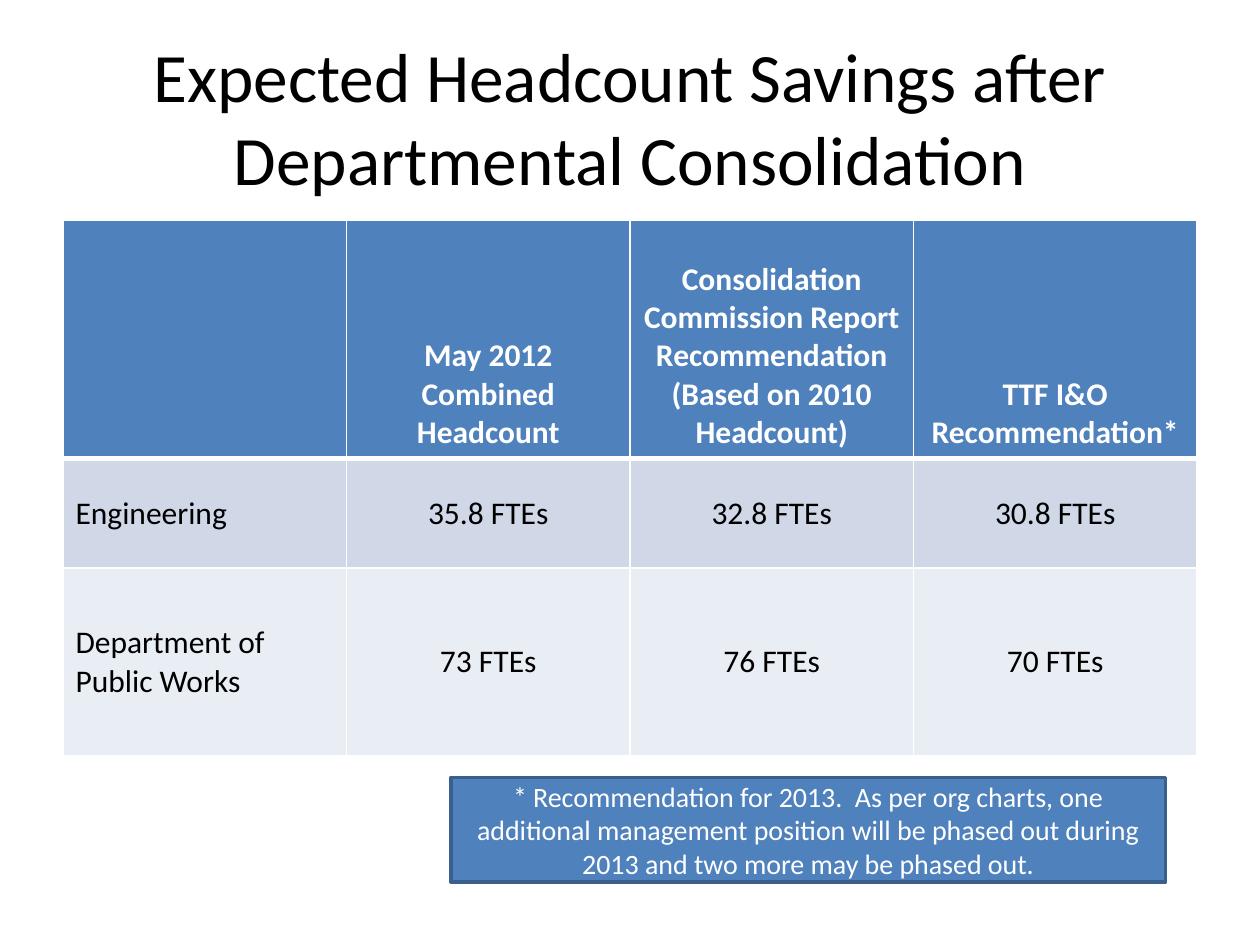
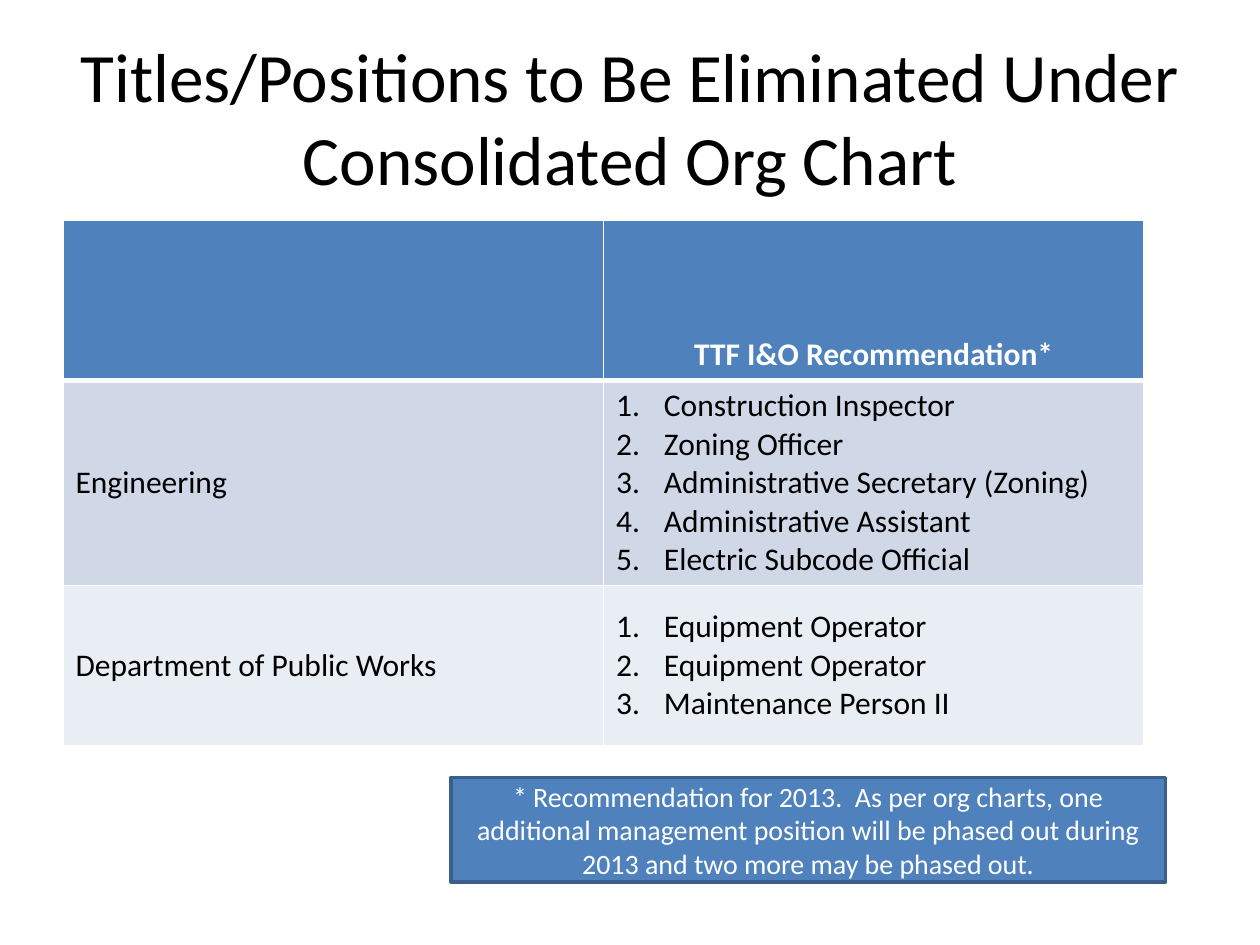
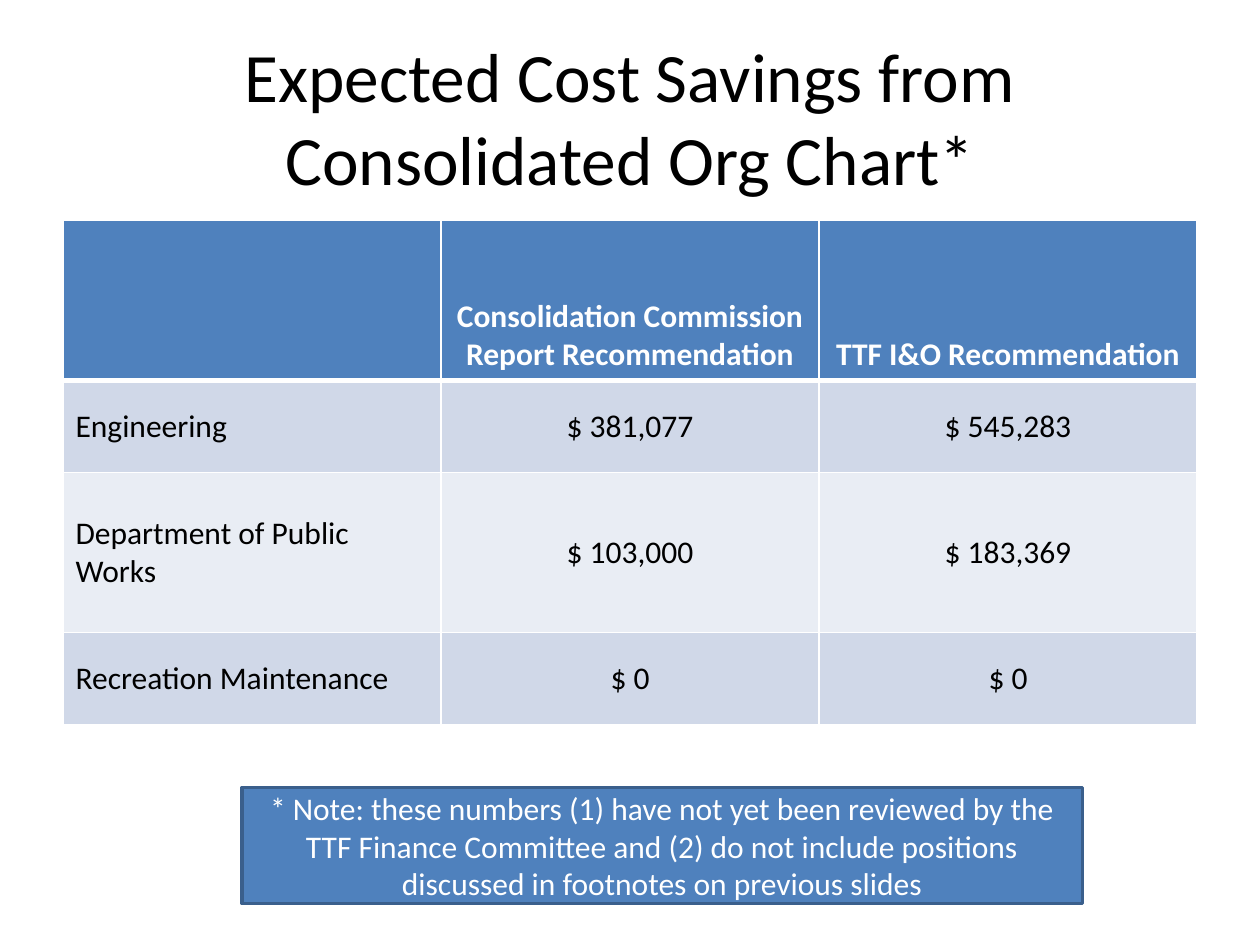
from lxml.etree import SubElement
from pptx import Presentation
from pptx.dml.color import RGBColor
from pptx.enum.shapes import MSO_SHAPE
from pptx.enum.text import MSO_ANCHOR, MSO_AUTO_SIZE, PP_ALIGN
from pptx.oxml.ns import qn
from pptx.util import Inches, Pt

COLORS = {
    "header": "4F81BD",
    "band_dark": "D0D8E8",
    "band_light": "E9EDF4",
    "note_line": "3A5F8C",
    "white": "FFFFFF",
    "black": "000000",
}
FONT = "Calibri"
TITLE_FORMAT = {"name": FONT, "size": Pt(39.6), "bold": False}
HEADER_FORMAT = {"name": FONT, "size": Pt(18), "bold": True}
BODY_FORMAT = {"name": FONT, "size": Pt(18), "bold": False}
NOTE_FORMAT = {"name": FONT, "size": Pt(16), "bold": False}

LEFT_MARGIN = 0.5
TABLE_TOP = 1.75
LIST_INDENT = 0.38
PHASE_OUT_NOTE = (
    "* Recommendation for 2013.  As per org charts, one additional management "
    "position will be phased out during 2013 and two more may be phased out."
)
PHASE_OUT_PLACE = (3.58, 6.17, 5.67, 0.83)


def color(name):
    return RGBColor.from_string(COLORS[name])


def write(paragraph, text, formats, color_name, alignment):
    paragraph.alignment = alignment
    span = paragraph.add_run()
    span.text = text
    for attribute, value in formats.items():
        setattr(span.font, attribute, value)
    span.font.color.rgb = color(color_name)


def add_title(page, text):
    title = page.shapes.title
    title.left, title.top = Inches(LEFT_MARGIN), Inches(0.3)
    title.width, title.height = Inches(9), Inches(1.25)
    frame = title.text_frame
    frame.word_wrap = True
    frame.auto_size = MSO_AUTO_SIZE.NONE
    frame.vertical_anchor = MSO_ANCHOR.MIDDLE
    write(frame.paragraphs[0], text, TITLE_FORMAT, "black", PP_ALIGN.CENTER)


def add_note(page, text, place, formats=NOTE_FORMAT):
    box = page.shapes.add_shape(MSO_SHAPE.RECTANGLE, *map(Inches, place))
    box.shadow.inherit = False
    box.fill.solid()
    box.fill.fore_color.rgb = color("header")
    box.line.color.rgb = color("note_line")
    box.line.width = Pt(2)
    frame = box.text_frame
    frame.word_wrap = True
    frame.vertical_anchor = MSO_ANCHOR.MIDDLE
    write(frame.paragraphs[0], text, formats, "white", PP_ALIGN.CENTER)


def set_borders(cell, widths):
    properties = cell._tc.get_or_add_tcPr()
    for position, (side, width) in enumerate(widths.items()):
        line = properties.makeelement(qn(f"a:{side}"), {"w": str(Pt(width))})
        fill = SubElement(line, qn("a:solidFill"))
        SubElement(fill, qn("a:srgbClr"), val=COLORS["white"])
        properties.insert(position, line)


def number_paragraph(paragraph):
    properties = paragraph._p.get_or_add_pPr()
    properties.set("marL", str(Inches(LIST_INDENT)))
    properties.set("indent", str(-Inches(LIST_INDENT)))
    SubElement(properties, qn("a:buFont"), typeface="+mj-lt")
    SubElement(properties, qn("a:buAutoNum"), type="arabicPeriod")


def fill_cell(cell, content, row, column):
    is_header = row == 0
    is_list = isinstance(content, list)
    band = "band_dark" if row % 2 else "band_light"
    cell.fill.solid()
    cell.fill.fore_color.rgb = color("header" if is_header else band)
    cell.vertical_anchor = MSO_ANCHOR.BOTTOM if is_header else MSO_ANCHOR.MIDDLE
    set_borders(cell, {
        "lnL": 1,
        "lnR": 1,
        "lnT": 3 if row == 1 else 1,
        "lnB": 3 if is_header else 1,
    })
    formats = HEADER_FORMAT if is_header else BODY_FORMAT
    text_color = "white" if is_header else "black"
    left_aligned = is_list or column == 0
    alignment = PP_ALIGN.LEFT if left_aligned else PP_ALIGN.CENTER
    frame = cell.text_frame
    for index, text in enumerate(content if is_list else [content]):
        paragraph = frame.add_paragraph() if index else frame.paragraphs[0]
        write(paragraph, text, formats, text_color, alignment)
        if is_list:
            number_paragraph(paragraph)


def add_grid(page, rows, heights, width=9):
    column_count = len(rows[0])
    table = page.shapes.add_table(
        len(rows), column_count, Inches(LEFT_MARGIN), Inches(TABLE_TOP),
        Inches(width), Inches(sum(heights)),
    ).table
    for column in table.columns:
        column.width = Inches(width / column_count)
    for row, (contents, height) in enumerate(zip(rows, heights)):
        table.rows[row].height = Inches(height)
        for column, content in enumerate(contents):
            fill_cell(table.cell(row, column), content, row, column)


def add_page(deck, title):
    page = deck.slides.add_slide(deck.slide_layouts[5])
    add_title(page, title)
    return page


def add_headcount_page(deck):
    page = add_page(deck, "Expected Headcount Savings after Departmental Consolidation")
    add_grid(page, [
        ["", "May 2012 Combined Headcount",
         "Consolidation Commission Report Recommendation (Based on 2010 Headcount)",
         "TTF I&O Recommendation*"],
        ["Engineering", "35.8 FTEs", "32.8 FTEs", "30.8 FTEs"],
        ["Department of Public Works", "73 FTEs", "76 FTEs", "70 FTEs"],
    ], [1.89, 0.87, 1.49])
    add_note(page, PHASE_OUT_NOTE, PHASE_OUT_PLACE)


def add_positions_page(deck):
    page = add_page(deck, "Titles/Positions to Be Eliminated Under Consolidated Org Chart")
    add_grid(page, [
        ["", "TTF I&O Recommendation*"],
        ["Engineering",
         ["Construction Inspector", "Zoning Officer",
          "Administrative Secretary (Zoning)", "Administrative Assistant",
          "Electric Subcode Official"]],
        ["Department of Public Works",
         ["Equipment Operator", "Equipment Operator", "Maintenance Person II"]],
    ], [1.27, 1.62, 1.27], width=8.58)
    add_note(page, PHASE_OUT_NOTE, PHASE_OUT_PLACE)


def add_cost_page(deck):
    page = add_page(deck, "Expected Cost Savings from Consolidated Org Chart*")
    add_grid(page, [
        ["", "Consolidation Commission Report Recommendation", "TTF I&O Recommendation"],
        ["Engineering", "$ 381,077", "$ 545,283"],
        ["Department of Public Works", "$ 103,000", "$ 183,369"],
        ["Recreation Maintenance", "$ 0", "$ 0"],
    ], [1.27, 0.73, 1.27, 0.73])
    add_note(
        page,
        "* Note: these numbers (1) have not yet been reviewed by the TTF Finance "
        "Committee and (2) do not include positions discussed in footnotes on "
        "previous slides",
        (1.92, 6.25, 6.67, 0.92),
        BODY_FORMAT,
    )


def main():
    deck = Presentation()
    deck.slide_width, deck.slide_height = Inches(10), Inches(7.5)
    add_headcount_page(deck)
    add_positions_page(deck)
    add_cost_page(deck)
    deck.save("out.pptx")


if __name__ == "__main__":
    main()
